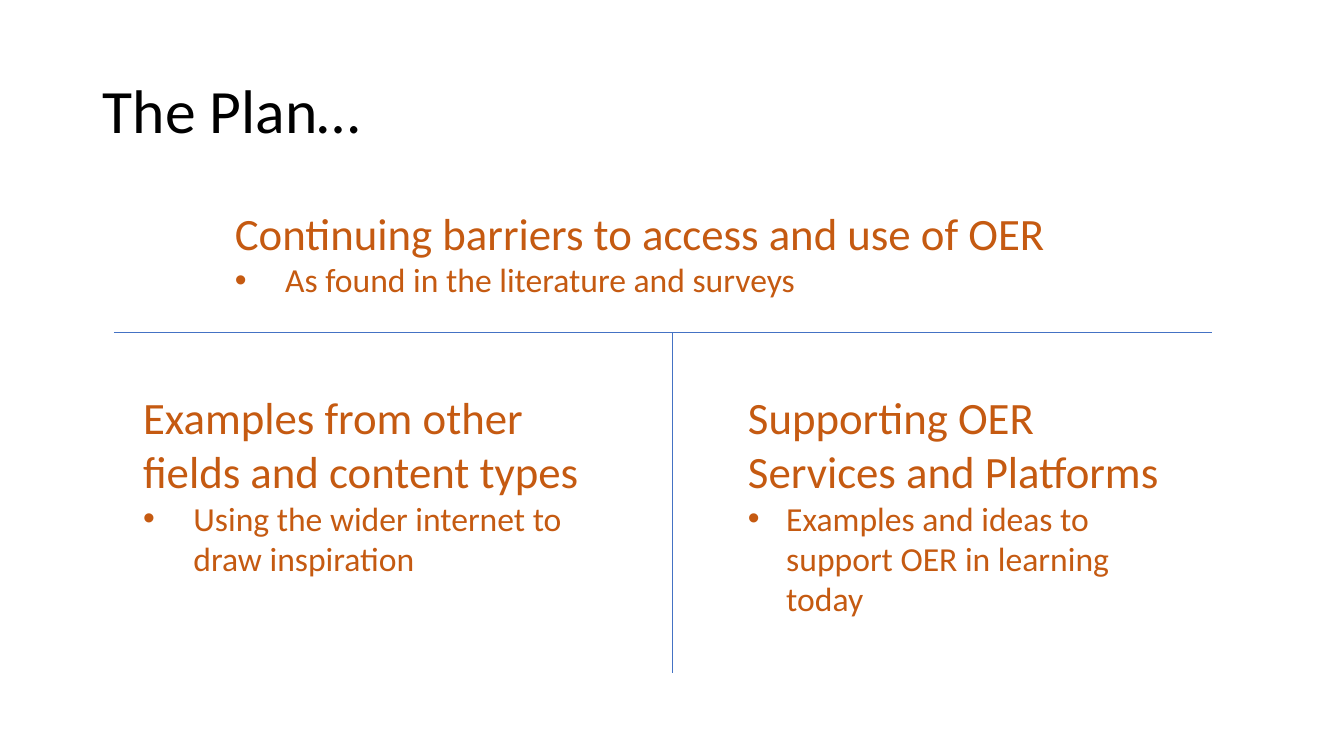
from lxml import etree
from pptx import Presentation
from pptx.dml.color import RGBColor
from pptx.enum.shapes import MSO_CONNECTOR
from pptx.enum.text import MSO_ANCHOR, MSO_AUTO_SIZE, PP_ALIGN
from pptx.oxml.ns import qn
from pptx.util import Inches, Pt

STRAIGHT = MSO_CONNECTOR.STRAIGHT
MIDDLE = MSO_ANCHOR.MIDDLE
FIT_SHAPE = MSO_AUTO_SIZE.SHAPE_TO_FIT_TEXT
NO_FIT = MSO_AUTO_SIZE.NONE
LEFT = PP_ALIGN.LEFT
TITLE_ONLY = 5


def color(hex_text):
    return RGBColor.from_string(hex_text)


class PlanSlide:
    font_name = "Calibri"
    title_color = "000000"
    text_color = "C55A11"
    line_color = "4472C4"

    def __init__(self, presentation):
        self.slide = presentation.slides.add_slide(
            presentation.slide_layouts[TITLE_ONLY])

    def style(self, paragraph, size, hex_text):
        paragraph.alignment = LEFT
        font = paragraph.font
        font.name = self.font_name
        font.size = Pt(size)
        font.color.rgb = color(hex_text)

    def title(self, text, left, top, width, height):
        shape = self.slide.shapes.title
        shape.left, shape.top = Inches(left), Inches(top)
        shape.width, shape.height = Inches(width), Inches(height)
        frame = shape.text_frame
        frame.text = text
        frame.vertical_anchor = MIDDLE
        frame.auto_size = NO_FIT
        paragraph = frame.paragraphs[0]
        paragraph.line_spacing = 0.9
        self.style(paragraph, 44, self.title_color)

    def divider(self, x1, y1, x2, y2):
        connector = self.slide.shapes.add_connector(
            STRAIGHT, Inches(x1), Inches(y1), Inches(x2), Inches(y2))
        connector.line.color.rgb = color(self.line_color)
        connector.line.width = Pt(0.5)
        etree.SubElement(connector._element.spPr, qn("a:effectLst"))

    def topic(self, heading, detail, left, top, width, height, indent):
        box = self.slide.shapes.add_textbox(
            Inches(left), Inches(top), Inches(width), Inches(height))
        frame = box.text_frame
        frame.word_wrap = True
        frame.auto_size = FIT_SHAPE
        frame.text = heading
        self.style(frame.paragraphs[0], 32, self.text_color)
        paragraph = frame.add_paragraph()
        paragraph.text = detail
        self.bullet(paragraph, indent)
        self.style(paragraph, 24, self.text_color)

    def bullet(self, paragraph, indent):
        properties = paragraph._p.get_or_add_pPr()
        properties.set("marL", str(Inches(indent)))
        properties.set("indent", str(-Inches(indent)))
        etree.SubElement(properties, qn("a:buFont"), typeface="Arial")
        etree.SubElement(properties, qn("a:buChar"), char="•")


def main():
    presentation = Presentation()
    presentation.slide_width = Inches(13.33)
    presentation.slide_height = Inches(7.5)
    plan = PlanSlide(presentation)

    # Title
    plan.title("The Plan…", 0.92, 0.4, 11.5, 1.45)

    # Dividing lines
    divider_top, center = 3.3, 6.67
    plan.divider(1.13, divider_top, 12.02, divider_top)
    plan.divider(center, divider_top, center, 6.68)

    # Topics
    plan.topic("Continuing barriers to access and use of OER",
               "As found in the literature and surveys",
               2.23, 1.99, 10.19, 1.04, 0.5)
    lower_top = 3.82
    plan.topic("Examples from other fields and content types",
               "Using the wider internet to draw inspiration",
               1.32, lower_top, 4.69, 1.99, 0.5)
    plan.topic("Supporting OER Services and Platforms",
               "Examples and ideas to support OER in learning today",
               7.32, lower_top, 4.37, 2.39, 0.38)

    presentation.save("out.pptx")


if __name__ == "__main__":
    main()
